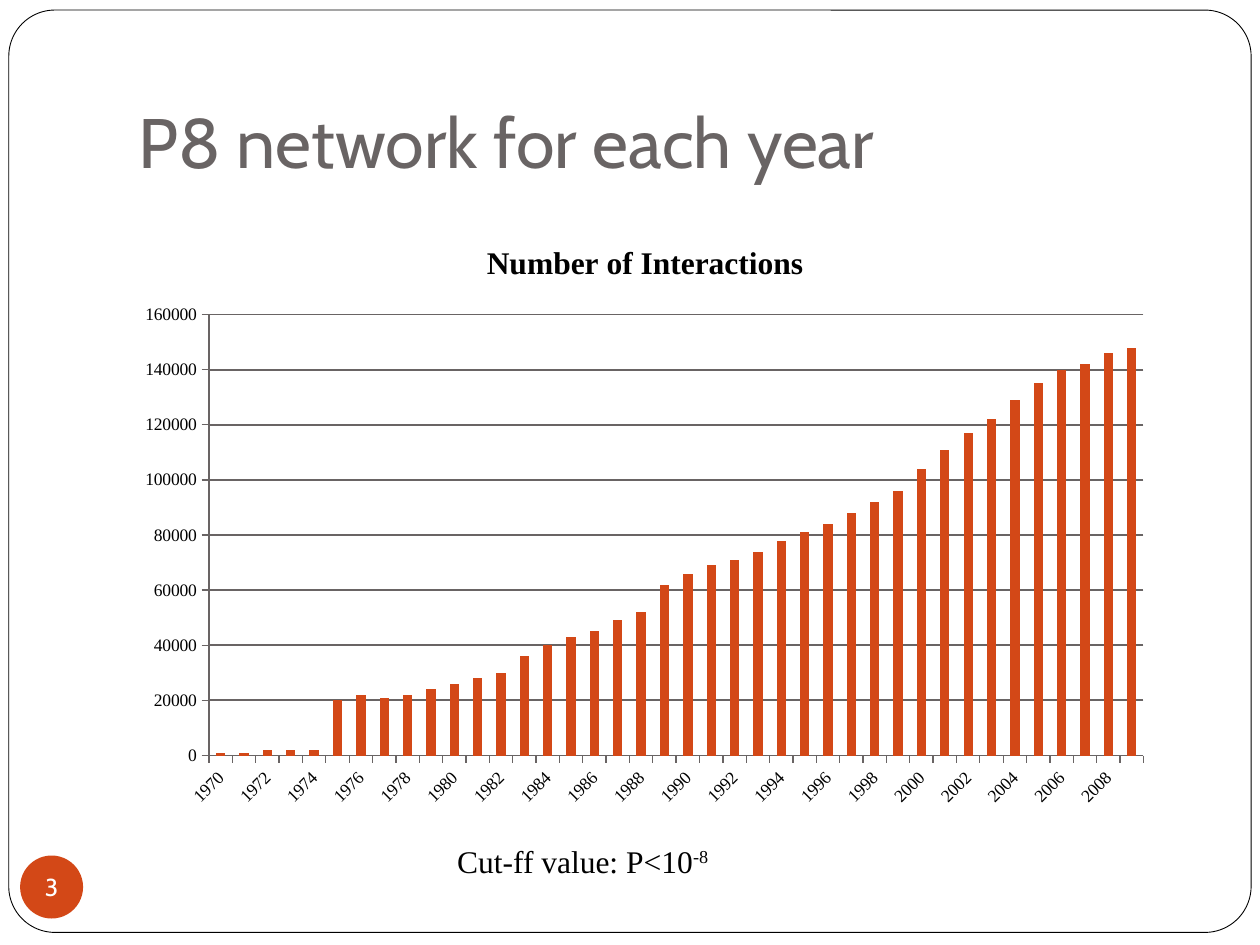
import pptx
import pptx.util
import pptx.chart.data
import pptx.dml.color
import pptx.enum.chart
import pptx.enum.shapes
import pptx.enum.text
import pptx.oxml
import pptx.oxml.ns

Inches, Pt = pptx.util.Inches, pptx.util.Pt
RGBColor = pptx.dml.color.RGBColor
Align = pptx.enum.text.PP_ALIGN
Anchor = pptx.enum.text.MSO_ANCHOR
Shape = pptx.enum.shapes.MSO_SHAPE
Tick = pptx.enum.chart.XL_TICK_MARK

BLACK = RGBColor(0, 0, 0)
WHITE = RGBColor(255, 255, 255)
GRAY = RGBColor(0x69, 0x64, 0x64)
RUST = RGBColor(0xD3, 0x48, 0x17)
SANS, SERIF = "Cabin", "Times New Roman"

TITLE = "P8 network for each year"
HEAD = "Number of Interactions"
NOTE = [("Cut-ff value: P<10", 0), ("-8", 30)]
NUMBER = "3"
START = 1970
COUNTS = [
    1, 1, 2, 2, 2, 20, 22, 21, 22, 24,
    26, 28, 30, 36, 40, 43, 45, 49, 52, 62,
    66, 69, 71, 74, 78, 81, 84, 88, 92, 96,
    104, 111, 117, 122, 129, 135, 140, 142, 146, 148,
]
PLOT = {"x": 0.08, "y": 0.16, "w": 0.9, "h": 0.74}


def place(box):
    return [Inches(n) for n in box]


def style(font, size, face, color, bold=False):
    font.size, font.name, font.bold = Pt(size), face, bold
    font.color.rgb = color


def write(frame, text, size=18, face=SERIF, color=BLACK, bold=False,
          align=Align.LEFT, anchor=Anchor.TOP, pad=(0.1, 0.05, 0.1, 0.05),
          wrap=True):
    frame.word_wrap = wrap
    frame.vertical_anchor = anchor
    (frame.margin_left, frame.margin_top,
     frame.margin_right, frame.margin_bottom) = place(pad)
    par = frame.paragraphs[0]
    par.alignment = align
    for words, lift in [(text, 0)] if isinstance(text, str) else text:
        run = par.add_run()
        run.text = words
        style(run.font, size, face, color, bold)
        if lift:
            run._r.get_or_add_rPr().set("baseline", str(lift * 1000))


def draw(slide, kind, box, fill, line=None):
    shape = slide.shapes.add_shape(kind, *place(box))
    shape.shadow.inherit = False
    shape.fill.solid()
    shape.fill.fore_color.rgb = fill
    if line is None:
        shape.line.fill.background()
    else:
        shape.line.color.rgb = line
        shape.line.width = Pt(0.5)
    return shape


def rule(line, width):
    line.color.rgb = GRAY
    line.width = Pt(width)


def add_bars(slide, box):
    data = pptx.chart.data.CategoryChartData()
    data.categories = range(START, START + len(COUNTS))
    data.add_series("Series 1", [n * 1000 for n in COUNTS])
    kind = pptx.enum.chart.XL_CHART_TYPE.COLUMN_CLUSTERED
    chart = slide.shapes.add_chart(kind, *place(box), data).chart
    style(chart.font, 10, SERIF, BLACK)
    chart.has_legend = False
    chart.has_title = True
    head = chart.chart_title.text_frame.paragraphs[0].add_run()
    head.text = HEAD
    style(head.font, 18, SERIF, BLACK, True)

    plot = chart.plots[0]
    plot.gap_width = 150
    plot.vary_by_categories = False
    fill = plot.series[0].format.fill
    fill.solid()
    fill.fore_color.rgb = RUST

    years, scale = chart.category_axis, chart.value_axis
    for axis in (years, scale):
        axis.major_tick_mark = Tick.OUTSIDE
        axis.minor_tick_mark = Tick.NONE
        style(axis.tick_labels.font, 10, SERIF, BLACK)
        rule(axis.format.line, 0.75)
    years.has_major_gridlines = False
    scale.has_major_gridlines = True
    rule(scale.major_gridlines.format.line, 1)
    scale.minimum_scale, scale.maximum_scale = 0, 160000
    scale.major_unit = 20000

    tag = pptx.oxml.ns.qn
    space = pptx.oxml.ns.nsdecls("c")
    node = years._element
    node.find(tag("c:txPr")).find(tag("a:bodyPr")).set("rot", "-2700000")
    skip = pptx.oxml.parse_xml(f'<c:tickLblSkip {space} val="2"/>')
    node.find(tag("c:noMultiLvlLbl")).addprevious(skip)

    area = plot._element.getparent()
    for old in area.findall(tag("c:layout")):
        area.remove(old)
    modes = "".join(f'<c:{k}Mode val="edge"/>' for k in "xy")
    sizes = "".join(f'<c:{k} val="{v}"/>' for k, v in PLOT.items())
    area.insert(0, pptx.oxml.parse_xml(
        f'<c:layout {space}><c:manualLayout><c:layoutTarget val="inner"/>'
        f'{modes}{sizes}</c:manualLayout></c:layout>'))


def main():
    deck = pptx.Presentation()
    deck.slide_width, deck.slide_height = Inches(10), Inches(7.5)
    slide = deck.slides.add_slide(deck.slide_layouts[5])

    frame = draw(slide, Shape.ROUNDED_RECTANGLE, (0.07, 0.08, 9.86, 7.32),
                 WHITE, BLACK)
    frame.adjustments[0] = 0.05
    title = slide.shapes.title
    title._element.addprevious(frame._element)
    title.left, title.top, title.width, title.height = place((1, 0.3, 8.5, 1.25))
    write(title.text_frame, TITLE, size=40, face=SANS, color=GRAY,
          anchor=Anchor.BOTTOM, pad=(0.1, 0.05, 0.1, 0.1))

    badge = draw(slide, Shape.OVAL, (0.16, 6.79, 0.5, 0.5), RUST)
    write(badge.text_frame, NUMBER, size=14, face=SANS, color=WHITE,
          align=Align.CENTER, anchor=Anchor.MIDDLE, pad=(0, 0, 0, 0), wrap=False)

    add_bars(slide, (1, 1.74, 8.24, 4.73))
    note = slide.shapes.add_textbox(*place((3.53, 6.63, 3.59, 0.42)))
    write(note.text_frame, NOTE)
    deck.save("out.pptx")


if __name__ == "__main__":
    main()
